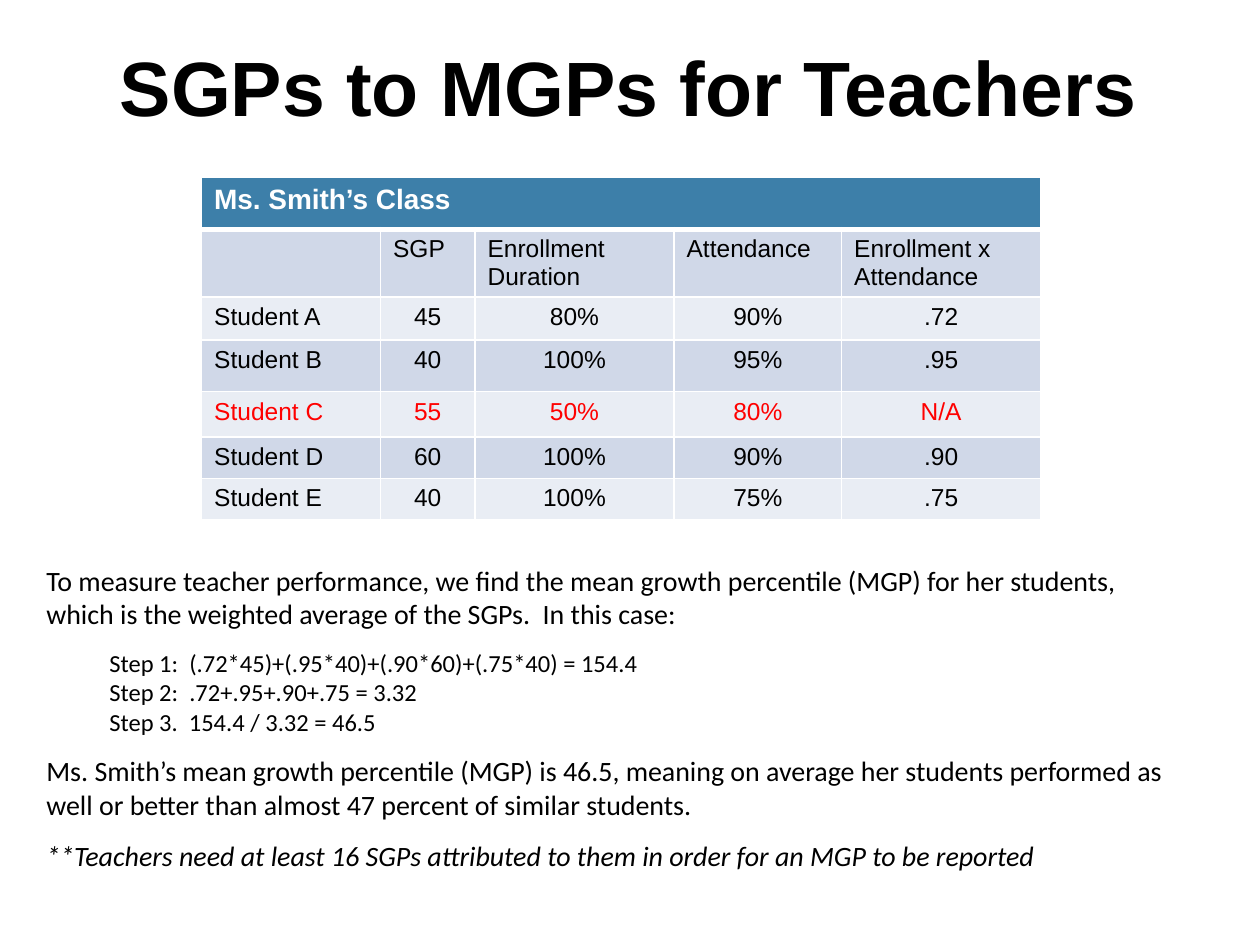
from lxml import etree
from pptx import Presentation
from pptx.dml.color import RGBColor
from pptx.enum.text import MSO_ANCHOR, MSO_AUTO_SIZE, PP_ALIGN
from pptx.oxml.ns import qn
from pptx.util import Inches, Pt

BOTTOM = MSO_ANCHOR.BOTTOM
NO_AUTOFIT = MSO_AUTO_SIZE.NONE
GROW_SHAPE = MSO_AUTO_SIZE.SHAPE_TO_FIT_TEXT
LEFT, CENTER = PP_ALIGN.LEFT, PP_ALIGN.CENTER

BLACK, WHITE, RED = "000000", "FFFFFF", "FF0000"
HEADER_BLUE, BAND_DARK, BAND_LIGHT = "3D7FA9", "D0D8E8", "E9EDF4"

COLUMN_WIDTHS = [1.42, 0.75, 1.58, 1.33, 1.58]
ROW_HEIGHTS = [0.41, 0.41, 0.34, 0.41, 0.36, 0.33, 0.33]
CLASS_NAME = "Ms. Smith’s Class"
COLUMN_HEADINGS = ["", "SGP", "Enrollment Duration", "Attendance",
                   "Enrollment x  Attendance"]
STUDENTS = [
    ["Student A", "45", "80%", "90%", ".72"],
    ["Student B", "40", "100%", "95%", ".95"],
    ["Student C", "55", "50%", "80%", "N/A"],
    ["Student D", "60", "100%", "90%", ".90"],
    ["Student E", "40", "100%", "75%", ".75"],
]
EXCLUDED_STUDENT = "Student C"

# Text, outline level, space before in points, italic
EXPLANATION = [
    ("To measure teacher performance, we find the mean growth percentile "
     "(MGP) for her students, which is the weighted average of the SGPs.  "
     "In this case:", 0, 0, False),
    ("Step 1:  (.72*45)+(.95*40)+(.90*60)+(.75*40) = 154.4", 1, 10, False),
    ("Step 2:  .72+.95+.90+.75 = 3.32", 1, 0, False),
    ("Step 3.  154.4 / 3.32 = 46.5", 1, 0, False),
    ("Ms. Smith’s mean growth percentile (MGP) is 46.5, meaning on average "
     "her students performed as well or better than almost 47 percent of "
     "similar students.", 0, 10, False),
    ("**Teachers need at least 16 SGPs attributed to them in order for an "
     "MGP to be reported", 0, 10, True),
]


def rgb(color):
    return RGBColor.from_string(color)


def add_run(paragraph, text, size, font, color=BLACK, bold=False, italic=False):
    run = paragraph.add_run()
    run.text = text
    run.font.size = Pt(size)
    run.font.name = font
    run.font.color.rgb = rgb(color)
    run.font.bold = bold
    run.font.italic = italic


def set_borders(cell, top, bottom):
    """Draw white cell borders, with top and bottom widths in points."""
    properties = cell._tc.get_or_add_tcPr()
    for side, width in (("L", 1), ("R", 1), ("T", top), ("B", bottom)):
        line = etree.SubElement(properties, qn(f"a:ln{side}"), w=str(Pt(width)))
        fill = etree.SubElement(line, qn("a:solidFill"))
        etree.SubElement(fill, qn("a:srgbClr"), val=WHITE)


def fill_cell(cell, text, background, size=14, color=BLACK, bold=False,
              alignment=LEFT, top=1, bottom=1):
    set_borders(cell, top, bottom)
    cell.fill.solid()
    cell.fill.fore_color.rgb = rgb(background)
    paragraph = cell.text_frame.paragraphs[0]
    paragraph.alignment = alignment
    if text:
        add_run(paragraph, text, size, "Arial", color, bold)


def add_title(slide, left, top, width, height):
    title = slide.shapes.title
    title.left, title.top, title.width, title.height = left, top, width, height
    frame = title.text_frame
    frame.auto_size = NO_AUTOFIT
    frame.vertical_anchor = BOTTOM
    paragraph = frame.paragraphs[0]
    paragraph.alignment = CENTER
    paragraph.line_spacing = Pt(36)
    add_run(paragraph, "SGPs to MGPs for Teachers", 44, "Arial", bold=True)


def add_class_table(slide, left, top, width, height):
    table = slide.shapes.add_table(len(ROW_HEIGHTS), len(COLUMN_WIDTHS),
                                   left, top, width, height).table
    table.horz_banding = False
    for column, column_width in zip(table.columns, COLUMN_WIDTHS):
        column.width = Inches(column_width)
    for row, row_height in zip(table.rows, ROW_HEIGHTS):
        row.height = Inches(row_height)

    last_column = len(COLUMN_WIDTHS) - 1
    table.cell(0, 0).merge(table.cell(0, last_column))
    fill_cell(table.cell(0, 0), CLASS_NAME, HEADER_BLUE, 16, WHITE, True,
              bottom=3)
    for column, heading in enumerate(COLUMN_HEADINGS):
        fill_cell(table.cell(1, column), heading, BAND_DARK, top=3)
    for row, student in enumerate(STUDENTS, start=2):
        background = BAND_DARK if row % 2 else BAND_LIGHT
        color = RED if student[0] == EXCLUDED_STUDENT else BLACK
        for column, text in enumerate(student):
            fill_cell(table.cell(row, column), text, background, color=color,
                      alignment=CENTER if column else LEFT)


def add_explanation(slide, left, top, width, height):
    frame = slide.shapes.add_textbox(left, top, width, height).text_frame
    frame.word_wrap = True
    frame.auto_size = GROW_SHAPE
    for index, (text, level, space, italic) in enumerate(EXPLANATION):
        paragraph = frame.add_paragraph() if index else frame.paragraphs[0]
        paragraph.level = level
        paragraph._p.get_or_add_pPr().set("marL", str(Inches(0.5 * level)))
        paragraph.space_before = Pt(space)
        add_run(paragraph, text, 14 if level else 16, "Calibri", italic=italic)


def main():
    presentation = Presentation()
    presentation.slide_width = Inches(10)
    presentation.slide_height = Inches(7.5)
    title_only = presentation.slide_layouts[5]
    slide = presentation.slides.add_slide(title_only)
    add_title(slide, Inches(0.49), Inches(0.17), Inches(9), Inches(0.93))
    add_class_table(slide, Inches(1.6), Inches(1.41), Inches(6.67), Inches(2.75))
    add_explanation(slide, Inches(0.27), Inches(4.42), Inches(9.17), Inches(2.56))
    presentation.save("out.pptx")


if __name__ == "__main__":
    main()
